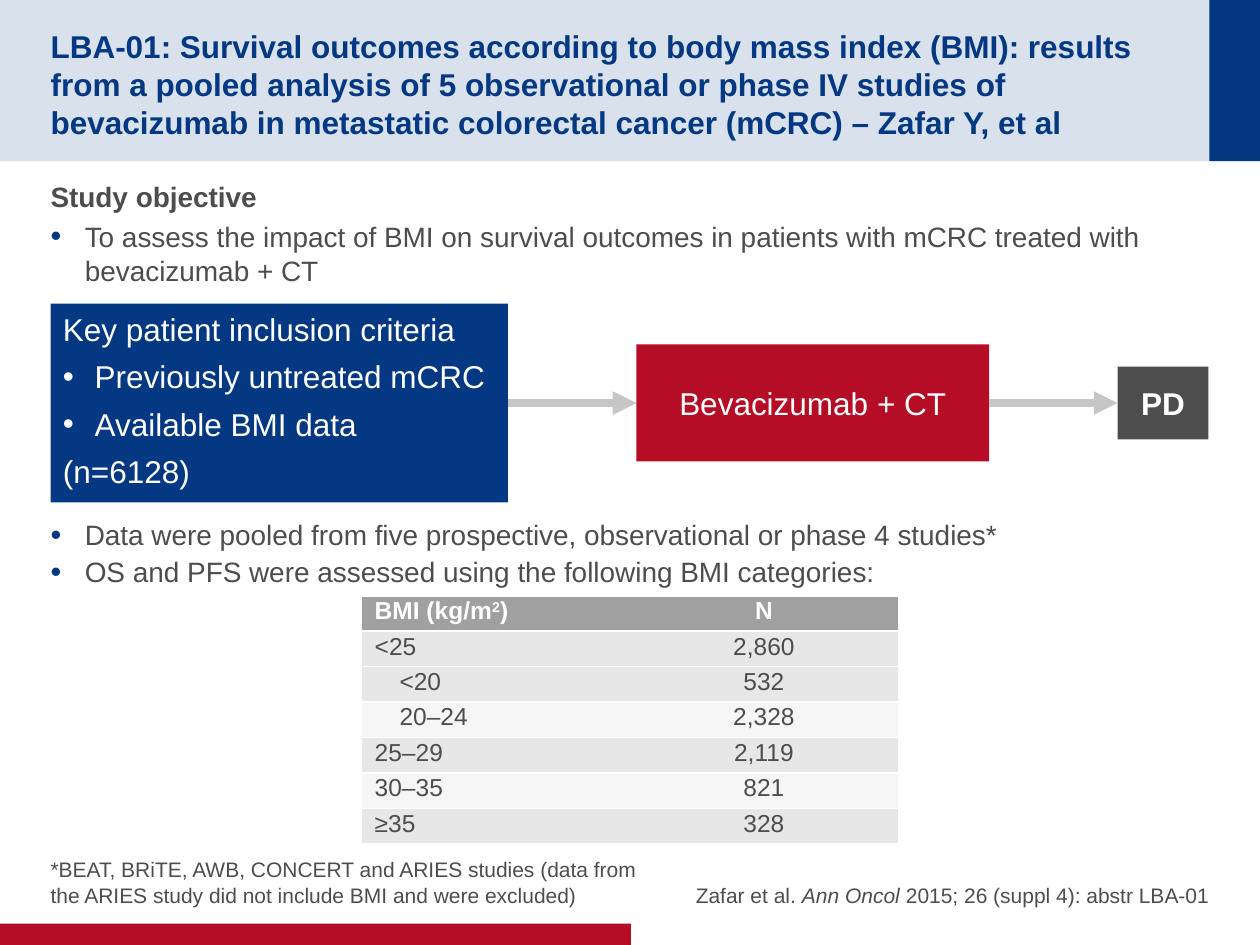
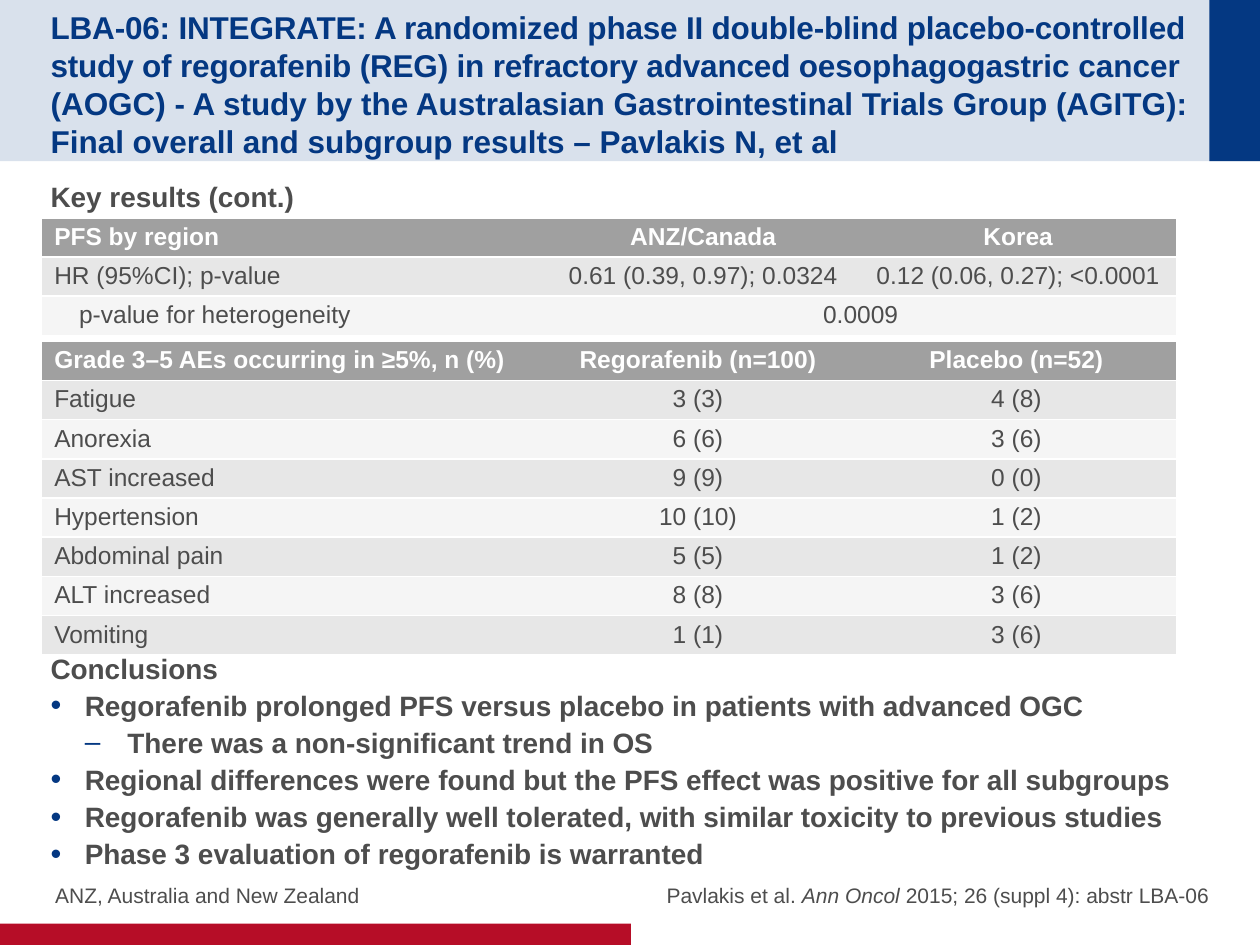
from lxml.etree import SubElement
from pptx import Presentation
from pptx.dml.color import RGBColor
from pptx.enum.shapes import MSO_CONNECTOR, MSO_SHAPE
from pptx.enum.text import MSO_ANCHOR, MSO_AUTO_SIZE, PP_ALIGN
from pptx.oxml import parse_xml
from pptx.oxml.ns import nsdecls, qn
from pptx.util import Cm, Pt

NAVY = RGBColor(0x04, 0x38, 0x82)
PALE_NAVY = RGBColor(0xD9, 0xE1, 0xEC)
RED = RGBColor(0xB6, 0x0D, 0x27)
DARK = RGBColor(0x4D, 0x4D, 0x4D)
ARROW_GREY = RGBColor(0xC6, 0xC6, 0xC6)
HEADER_GREY = RGBColor(0xA0, 0xA0, 0xA0)
ROW_GREY = RGBColor(0xE7, 0xE7, 0xE7)
ROW_PALE = RGBColor(0xF5, 0xF5, 0xF5)
WHITE = RGBColor(0xFF, 0xFF, 0xFF)

FONT = "Arial"
MARGIN = 1.02
BODY_WIDTH = 23.37
ITALIC = {"i": "1"}
SUPERSCRIPT = {"baseline": "30000"}
TIGHT = {"spc": "-10"}

# Bullet styles: character, text indent, hang (cm), size in percent
BULLET = ("•", 0.69, 0.69, 110)
DASH = ("–", 1.55, 0.86, 100)
BOX_BULLET = ("•", 0.64, 0.64, 100)


# Text helpers
def write(para, content, size, color, bold=False):
    """Content is a string or a list of (text, extra run attributes)."""
    spans = [(content, {})] if isinstance(content, str) else content
    for text, extras in spans:
        span = para.add_run()
        span.text = text
        span.font.name = FONT
        span.font.size = Pt(size)
        span.font.bold = bold
        span.font.color.rgb = color
        for name, value in extras.items():
            span._r.get_or_add_rPr().set(name, value)


def set_bullet(para, style, color):
    char, indent, hang, percent = style
    props = para._p.get_or_add_pPr()
    props.set("marL", str(Cm(indent)))
    props.set("indent", str(-Cm(hang)))
    bullet_color = SubElement(props, qn("a:buClr"))
    SubElement(bullet_color, qn("a:srgbClr"), val=str(color))
    SubElement(props, qn("a:buSzPct"), val=str(percent * 1000))
    SubElement(props, qn("a:buFont"), typeface=FONT)
    SubElement(props, qn("a:buChar"), char=char)


def set_frame(frame, anchor, margins=(0, 0, 0, 0)):
    frame.word_wrap = True
    frame.auto_size = MSO_AUTO_SIZE.NONE
    frame.vertical_anchor = anchor
    (frame.margin_left, frame.margin_top,
     frame.margin_right, frame.margin_bottom) = (Cm(m) for m in margins)


def write_lines(frame, lines, size, color, after, bold=False, bullet_color=NAVY):
    """Lines are (bullet style or None, text, bold or None for the default)."""
    for number, (style, text, line_bold) in enumerate(lines):
        para = frame.add_paragraph() if number else frame.paragraphs[0]
        para.alignment = PP_ALIGN.LEFT
        para.space_after = Pt(after)
        if style:
            set_bullet(para, style, bullet_color)
        write(para, text, size, color, bold if line_bold is None else line_bold)


def add_text(slide, left, top, width, height, anchor=MSO_ANCHOR.TOP):
    box = slide.shapes.add_textbox(Cm(left), Cm(top), Cm(width), Cm(height))
    set_frame(box.text_frame, anchor)
    return box.text_frame


def add_box(slide, left, top, width, height, color):
    box = slide.shapes.add_shape(MSO_SHAPE.RECTANGLE, Cm(left), Cm(top),
                                 Cm(width), Cm(height))
    box.shadow.inherit = False
    box.fill.solid()
    box.fill.fore_color.rgb = color
    box.line.fill.background()
    return box


# Shared frame of the slides
def move_bands_to_layout(slide):
    bands = [
        add_box(slide, 0, 0, 25.4, 3.25, PALE_NAVY),
        add_box(slide, 24.38, 0, 1.02, 3.25, NAVY),
        add_box(slide, 0, 18.62, 12.72, 0.43, RED),
    ]
    tree = slide.slide_layout.shapes.element
    for position, band in enumerate(bands, start=2):
        tree.insert(position, band.element)


def set_title(slide, content, width):
    title = slide.shapes.title
    title.left, title.top = Cm(MARGIN), Cm(0.51)
    title.width, title.height = Cm(width), Cm(2.24)
    set_frame(title.text_frame, MSO_ANCHOR.MIDDLE, (0, 0.13, 0, 0))
    para = title.text_frame.paragraphs[0]
    para.alignment = PP_ALIGN.LEFT
    write(para, content, 18, NAVY, bold=True)


def add_footers(slide, note, citation):
    top, height = 16.94, 1.35
    for left, width, content, align in (
            (MARGIN, 12.52, note, PP_ALIGN.LEFT),
            (12.9, 11.48, citation, PP_ALIGN.RIGHT)):
        frame = add_text(slide, left, top, width, height, MSO_ANCHOR.BOTTOM)
        frame.paragraphs[0].alignment = align
        write(frame.paragraphs[0], content, 12, DARK)


# Tables
def set_borders(cell):
    props = cell._tc.get_or_add_tcPr()
    for position, side in enumerate("LRTB"):
        paint = ('<a:solidFill><a:srgbClr val="FFFFFF"/></a:solidFill>'
                 if side in "TB" else "<a:noFill/>")
        props.insert(position, parse_xml(
            f'<a:ln{side} {nsdecls("a")} w="12700">{paint}</a:ln{side}>'))


def add_grid(slide, left, top, widths, row_height, leading, rows,
             pale_rows, indented_rows=()):
    frame = slide.shapes.add_table(len(rows), len(widths), Cm(left), Cm(top),
                                   Cm(sum(widths)), Cm(row_height * len(rows)))
    table = frame.table
    table.horz_banding = False
    for column, width in zip(table.columns, widths):
        column.width = Cm(width)
    for r, row in enumerate(rows):
        table.rows[r].height = Cm(row_height)
        header = r == 0
        shade = HEADER_GREY if header else ROW_PALE if r in pale_rows else ROW_GREY
        for c in range(len(widths)):
            cell = table.cell(r, c)
            cell.vertical_anchor = MSO_ANCHOR.MIDDLE
            cell.fill.solid()
            cell.fill.fore_color.rgb = shade
            set_borders(cell)
            if c >= len(row):
                continue
            para = cell.text_frame.paragraphs[0]
            para.alignment = PP_ALIGN.CENTER if c else PP_ALIGN.LEFT
            para.line_spacing = Pt(leading)
            if c == 0 and r in indented_rows:
                para._p.get_or_add_pPr().set("marL", str(Cm(0.5)))
            write(para, row[c], 14, WHITE if header else DARK, header)
        if len(row) < len(widths):
            table.cell(r, len(row) - 1).merge(table.cell(r, len(widths) - 1))


# Study design flow
def add_arrow(slide, source, target):
    arrow = slide.shapes.add_connector(MSO_CONNECTOR.STRAIGHT, 0, 0, 0, 0)
    arrow.begin_connect(source, 3)
    arrow.end_connect(target, 1)
    arrow.line.color.rgb = ARROW_GREY
    arrow.line.width = Pt(4.5)
    SubElement(arrow.line._get_or_add_ln(), qn("a:tailEnd"), type="triangle")
    SubElement(arrow.element.spPr, qn("a:effectLst"))


def add_flow(slide, left, top, width, height):
    steps = [(9.22, height, NAVY), (7.11, 2.36, RED), (1.83, 1.47, DARK)]
    gap = (width - sum(step[0] for step in steps)) / (len(steps) - 1)
    boxes = []
    for step_width, step_height, color in steps:
        boxes.append(add_box(slide, left, top + (height - step_height) / 2,
                             step_width, step_height, color))
        left += step_width + gap

    criteria, treatment, progression = boxes
    set_frame(criteria.text_frame, MSO_ANCHOR.TOP, (0.25, 0.13, 0.25, 0.13))
    write_lines(criteria.text_frame, [
        (None, "Key patient inclusion criteria", None),
        (BOX_BULLET, "Previously untreated mCRC", None),
        (BOX_BULLET, "Available BMI data", None),
        (None, "(n=6128)", None),
    ], 18, WHITE, after=5.4, bullet_color=WHITE)
    for box, text, bold in ((treatment, "Bevacizumab + CT", False),
                            (progression, "PD", True)):
        set_frame(box.text_frame, MSO_ANCHOR.MIDDLE, (0.25, 0, 0.25, 0))
        box.text_frame.paragraphs[0].alignment = PP_ALIGN.CENTER
        write(box.text_frame.paragraphs[0], text, 18, WHITE, bold)
    add_arrow(slide, criteria, treatment)
    add_arrow(slide, treatment, progression)


# Slides
def build_design_slide(slide):
    set_title(slide, "LBA-01: Survival outcomes according to body mass index (BMI): "
              "results from a pooled analysis of 5 observational or phase IV studies "
              "of bevacizumab in metastatic colorectal cancer (mCRC) – Zafar Y, et al",
              22.89)
    objective = add_text(slide, MARGIN, 3.61, BODY_WIDTH, 2.4)
    write_lines(objective, [
        (None, "Study objective", True),
        (BULLET, "To assess the impact of BMI on survival outcomes in patients "
                 "with mCRC treated with bevacizumab + CT", None),
    ], 16, DARK, after=4)
    add_flow(slide, MARGIN, 6.12, 23.34, 4.01)
    methods = add_text(slide, MARGIN, 10.44, BODY_WIDTH, 1.5)
    write_lines(methods, [
        (BULLET, "Data were pooled from five prospective, observational or "
                 "phase 4 studies*", None),
        (BULLET, "OS and PFS were assessed using the following BMI categories:", None),
    ], 16, DARK, after=2)
    add_grid(slide, 7.3, 12.01, [5.4, 5.4], 0.71, 13, [
        ([("BMI (kg/m", {}), ("2", SUPERSCRIPT), (")", {})], "N"),
        ("<25", "2,860"),
        ("<20", "532"),
        ("20–24", "2,328"),
        ("25–29", "2,119"),
        ("30–35", "821"),
        ("≥35", "328"),
    ], pale_rows=(3, 5), indented_rows=(2, 3))
    add_footers(slide, "*BEAT, BRiTE, AWB, CONCERT and ARIES studies (data from the "
                "ARIES study did not include BMI and were excluded)",
                [("Zafar et al. ", {}), ("Ann Oncol ", ITALIC),
                 ("2015; 26 (suppl 4): abstr LBA-01", {})])


def build_results_slide(slide):
    set_title(slide, [
        ("LBA-06: INTEGRATE: A randomized phase II double-blind placebo-controlled "
         "study of regorafenib (REG) in refractory advanced ", TIGHT),
        ("oesophagogastric cancer (AOGC) - A study by the Australasian "
         "Gastrointestinal Trials Group (AGITG): Final overall and subgroup "
         "results – Pavlakis N, et al", {}),
    ], 23.11)
    heading = add_text(slide, MARGIN, 3.61, BODY_WIDTH, 0.75)
    write_lines(heading, [(None, "Key results (cont.)", True)], 16, DARK, after=4)
    add_grid(slide, 0.84, 4.39, [10.16, 6.35, 6.35], 0.79, 15, [
        ("PFS by region", "ANZ/Canada", "Korea"),
        ("HR (95%CI); p-value", "0.61 (0.39, 0.97); 0.0324",
         "0.12 (0.06, 0.27); <0.0001"),
        ("p-value for heterogeneity", "0.0009"),
    ], pale_rows=(2,), indented_rows=(2,))
    add_grid(slide, 0.84, 6.88, [10.02, 6.42, 6.42], 0.79, 15, [
        ("Grade 3–5 AEs occurring in ≥5%, n (%)", "Regorafenib (n=100)",
         "Placebo (n=52)"),
        ("Fatigue", "3 (3)", "4 (8)"),
        ("Anorexia", "6 (6)", "3 (6)"),
        ("AST increased", "9 (9)", "0 (0)"),
        ("Hypertension", "10 (10)", "1 (2)"),
        ("Abdominal pain", "5 (5)", "1 (2)"),
        ("ALT increased", "8 (8)", "3 (6)"),
        ("Vomiting", "1 (1)", "3 (6)"),
    ], pale_rows=(2, 4, 6))
    conclusions = add_text(slide, MARGIN, 13.13, BODY_WIDTH, 4.5)
    write_lines(conclusions, [
        (None, "Conclusions", None),
        (BULLET, "Regorafenib prolonged PFS versus placebo in patients with "
                 "advanced OGC", None),
        (DASH, "There was a non-significant trend in OS", None),
        (BULLET, "Regional differences were found but the PFS effect was positive "
                 "for all subgroups", None),
        (BULLET, "Regorafenib was generally well tolerated, with similar toxicity "
                 "to previous studies", None),
        (BULLET, "Phase 3 evaluation of regorafenib is warranted", None),
    ], 16, DARK, after=2, bold=True)
    add_footers(slide, " ANZ, Australia and New Zealand",
                [("Pavlakis et al. ", {}), ("Ann Oncol", ITALIC),
                 (" 2015; 26 (suppl 4): abstr LBA-06", {})])


def main():
    deck = Presentation()
    deck.slide_width, deck.slide_height = Cm(25.4), Cm(19.05)
    title_only = deck.slide_layouts[5]
    design = deck.slides.add_slide(title_only)
    move_bands_to_layout(design)
    build_design_slide(design)
    build_results_slide(deck.slides.add_slide(title_only))
    deck.save("out.pptx")


if __name__ == "__main__":
    main()
